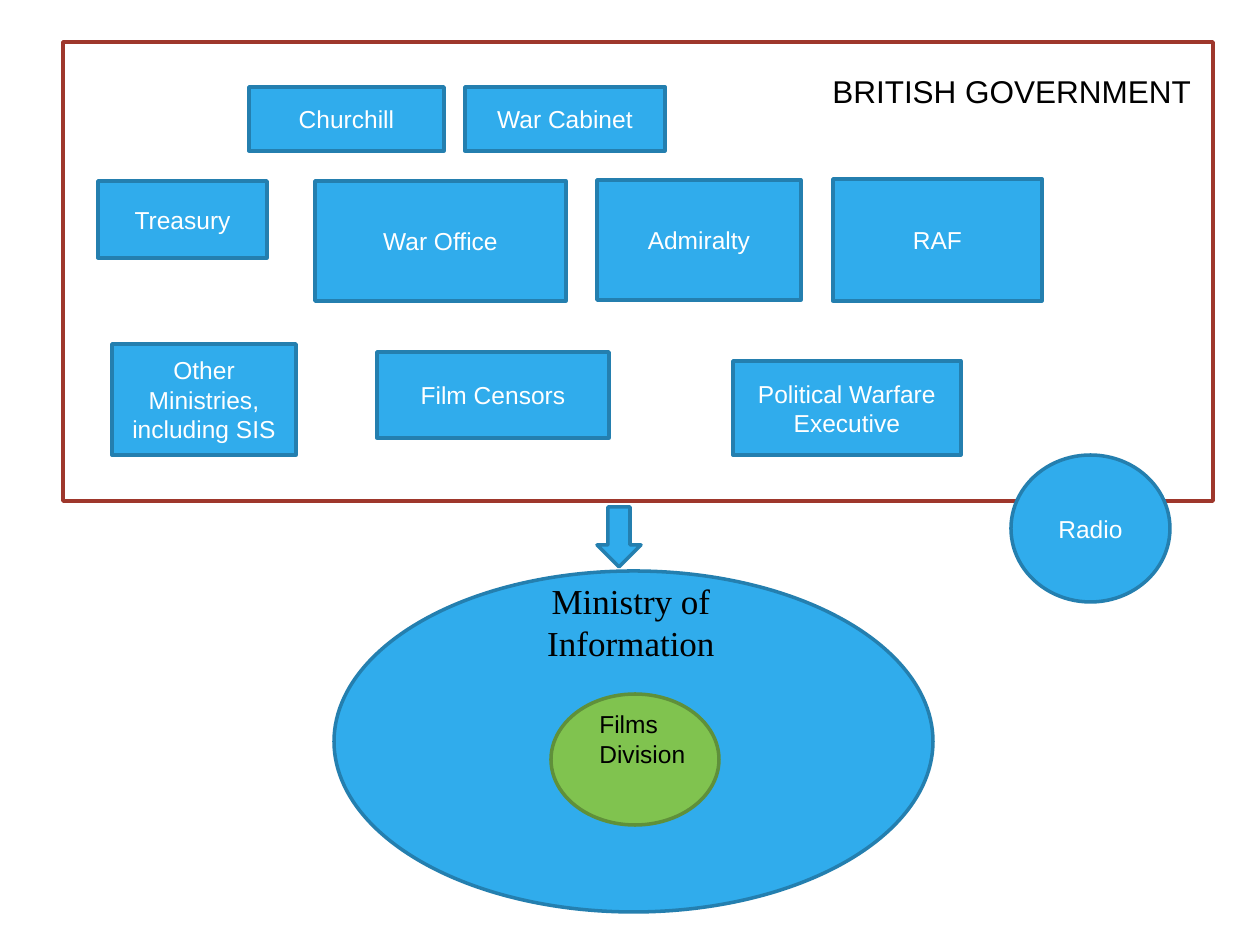
from dataclasses import dataclass

from pptx import Presentation
from pptx.dml.color import RGBColor
from pptx.enum.shapes import MSO_SHAPE as Shape
from pptx.enum.text import MSO_ANCHOR as Anchor, MSO_AUTO_SIZE as AutoSize, PP_ALIGN as Align
from pptx.util import Emu, Pt

EMU_PER_PX = 914400 / 126
COLORS = {
    "blue": "30ACEC",
    "blue_line": "247FAF",
    "green": "80C34F",
    "green_line": "5F903A",
    "red_line": "9E372C",
    "white": "FFFFFF",
    "black": "000000",
}


@dataclass(frozen=True)
class Body:
    x: int
    y: int
    w: int
    h: int
    text: str = ""
    kind: Shape = Shape.RECTANGLE
    fill: str = "blue"
    line: str = "blue_line"


@dataclass(frozen=True)
class Label:
    x: int
    y: int
    w: int
    h: int
    lines: tuple[str, ...]
    size: int
    font: str = "Arial"
    align: Align = Align.LEFT


MINISTRY = [
    Body(334, 571, 599, 341, kind=Shape.OVAL),
    Body(551, 694, 168, 131, kind=Shape.OVAL, fill="green", line="green_line"),
]
MINISTRY_LABELS = [
    Label(529, 573, 204, 97, ("Ministry of Information",), 20, "Times New Roman", Align.CENTER),
    Label(587, 703, 111, 72, ("Films", "Division"), 14),
]
GOVERNMENT = [
    Body(63, 42, 1150, 459, fill="white", line="red_line"),
    Body(249, 87, 195, 64, "Churchill"),
    Body(98, 181, 169, 77, "Treasury"),
    Body(465, 87, 200, 64, "War Cabinet"),
    Body(315, 181, 251, 120, "War Office"),
    Body(597, 180, 204, 120, "Admiralty"),
    Body(833, 179, 209, 122, "RAF"),
    Body(112, 344, 184, 111, "Other Ministries, including SIS"),
    Body(377, 352, 232, 86, "Film Censors"),
    Body(733, 361, 228, 94, "Political Warfare Executive"),
]
GOVERNMENT_LABELS = [Label(820, 66, 393, 50, ("BRITISH GOVERNMENT",), 18)]
OUTSIDE = [
    Body(1011, 455, 159, 147, "Radio", Shape.OVAL),
    Body(597, 507, 44, 60, kind=Shape.DOWN_ARROW),
]


def px(n: int) -> Emu:
    return Emu(round(n * EMU_PER_PX))


def color(name: str) -> RGBColor:
    return RGBColor.from_string(COLORS[name])


def add_run(p, text: str, size: int, font: str, fill: str) -> None:
    r = p.add_run()
    r.text = text
    r.font.size = Pt(size)
    r.font.name = font
    r.font.color.rgb = color(fill)


def draw_body(s, body: Body) -> None:
    sp = s.shapes.add_shape(body.kind, px(body.x), px(body.y), px(body.w), px(body.h))
    sp.shadow.inherit = False
    sp.fill.solid()
    sp.fill.fore_color.rgb = color(body.fill)
    sp.line.color.rgb = color(body.line)
    sp.line.width = Pt(2)
    if body.text:
        tf = sp.text_frame
        tf.word_wrap = True
        tf.vertical_anchor = Anchor.MIDDLE
        p = tf.paragraphs[0]
        p.alignment = Align.CENTER
        add_run(p, body.text, 14, "Arial", "white")


def draw_label(s, label: Label) -> None:
    sp = s.shapes.add_textbox(px(label.x), px(label.y), px(label.w), px(label.h))
    tf = sp.text_frame
    tf.word_wrap = True
    tf.auto_size = AutoSize.SHAPE_TO_FIT_TEXT
    for i, line in enumerate(label.lines):
        p = tf.add_paragraph() if i else tf.paragraphs[0]
        p.alignment = label.align
        add_run(p, line, label.size, label.font, "black")


def main() -> None:
    prs = Presentation()
    prs.slide_width, prs.slide_height = px(1260), px(945)
    s = prs.slides.add_slide(prs.slide_layouts[6])
    for bodies, labels in (
        (MINISTRY, MINISTRY_LABELS),
        (GOVERNMENT, GOVERNMENT_LABELS),
        (OUTSIDE, []),
    ):
        for body in bodies:
            draw_body(s, body)
        for label in labels:
            draw_label(s, label)
    prs.save("out.pptx")


if __name__ == "__main__":
    main()
